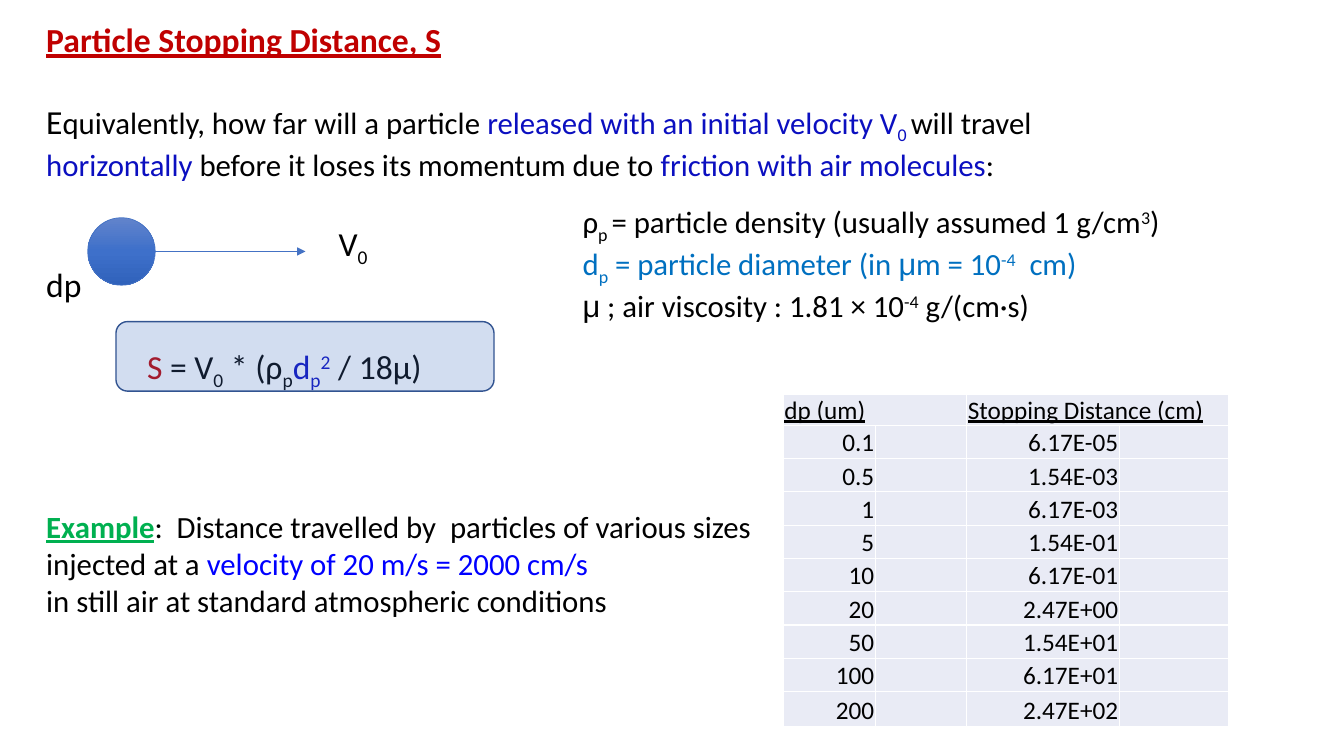
from copy import deepcopy

from lxml import etree
from pptx import Presentation
from pptx.dml.color import RGBColor
from pptx.enum.shapes import MSO_CONNECTOR, MSO_SHAPE
from pptx.enum.text import MSO_ANCHOR, MSO_AUTO_SIZE, PP_ALIGN
from pptx.oxml.ns import qn
from pptx.util import Inches, Pt

OVAL, ROUND = MSO_SHAPE.OVAL, MSO_SHAPE.ROUNDED_RECTANGLE
LINE = MSO_CONNECTOR.STRAIGHT
GROW, BOTTOM = MSO_AUTO_SIZE.SHAPE_TO_FIT_TEXT, MSO_ANCHOR.BOTTOM
RIGHT, LEFT = PP_ALIGN.RIGHT, PP_ALIGN.LEFT

HUES = {
    "red": "C00000", "black": "000000", "navy": "0B0FC0", "green": "00B050",
    "blue": "0000FF", "sky": "0070C0", "accent": "4472C4", "edge": "325491",
    "cell": "E9EBF5", "white": "FFFFFF",
    "top": "6183CB", "mid": "3E70CA", "base": "3062BB",
}
SUB, SUP = -25000, 30000
GAP = 29.3
HEAD = {"bold": True, "underline": True}
DATA = [
    ("0.1", "6.17E-05"), ("0.5", "1.54E-03"), ("1", "6.17E-03"),
    ("5", "1.54E-01"), ("10", "6.17E-01"), ("20", "2.47E+00"),
    ("50", "1.54E+01"), ("100", "6.17E+01"), ("200", "2.47E+02"),
]


def hue(name):
    return RGBColor.from_string(HUES[name])


def add_run(para, text, tint="black", shift=0, **extra):
    run = para.add_run()
    run.text = text
    look = {"name": "Calibri", "size": Pt(22), "bold": False, **extra}
    for key, value in look.items():
        setattr(run.font, key, value)
    run.font.color.rgb = hue(tint)
    if shift:
        run.font._element.set("baseline", str(shift))


def add_text(slide, box, paras, size):
    frame = slide.shapes.add_textbox(*map(Inches, box)).text_frame
    frame.word_wrap = True
    frame.auto_size = GROW
    for i, (gap, indent, runs) in enumerate(paras):
        para = frame.paragraphs[0] if i == 0 else frame.add_paragraph()
        para.space_before = Pt(gap)
        props = para._p.get_or_add_pPr()
        props.set("marL", str(Inches(indent)))
        props.set("indent", "0")
        for text, tint, shift, *extra in runs:
            look = extra[0] if extra else {}
            add_run(para, text, tint, shift, **{"size": Pt(size), **look})


def add_body(slide, x, y, w, h):
    big, small = {"size": Pt(24)}, {"size": Pt(22)}
    paras = [
        (0, 0, [("Particle Stopping Distance, S", "red", 0, {**big, **HEAD})]),
        (GAP, 0, [
            ("E", "black", 0, big),
            ("quivalently, how far will a particle ", "black", 0),
            ("released with an initial velocity V", "navy", 0),
            ("0 ", "navy", SUB),
            ("will travel ", "black", 0),
            ("horizontally", "navy", 0),
            (" before it loses its momentum due to ", "black", 0),
            ("friction with air molecules", "navy", 0),
            (":", "black", 0),
        ]),
        (2 * GAP, 0, [("dp", "black", 0, big)]),
        (GAP, 1, [(*part, big) for part in [
            ("S ", "red", 0), ("= V", "black", 0), ("0", "black", SUB),
            (" * (ρ", "black", 0), ("p", "black", SUB), ("d", "navy", 0),
            ("p", "navy", SUB), ("2", "navy", SUP), (" / 18μ)", "black", 0),
        ]]),
        (83, 0, [
            ("Example", "green", 0, {**small, **HEAD}),
            (":  Distance travelled by  particles of various sizes", "black", 0),
        ]),
        (0, 0, [
            ("injected at a ", "black", 0),
            ("velocity of 20 m/s = 2000 cm/s", "blue", 0),
        ]),
        (0, 0, [("in still air at standard atmospheric conditions", "black", 0)]),
    ]
    add_text(slide, (x, y, w, h), paras, 22)


def add_motion(slide, x, y, w, h):
    ball = slide.shapes.add_shape(OVAL, *map(Inches, (x, y, h, h)))
    ball.shadow.inherit = False
    ball.fill.gradient()
    ball.fill.gradient_angle = 270
    stops = ball._element.spPr.find(".//" + qn("a:gsLst"))
    stops.insert(1, deepcopy(stops[0]))
    for stop, tint, pos in zip(stops, ("top", "mid", "base"), (0, 50000, 100000)):
        stop.set("pos", str(pos))
        stop.remove(stop[0])
        etree.SubElement(stop, qn("a:srgbClr"), val=HUES[tint])
    ends = (x + h, y + h / 2, x + 2.16, y + h / 2)
    arrow = slide.shapes.add_connector(LINE, *map(Inches, ends))
    for item in (ball, arrow):
        item.line.color.rgb = hue("accent")
        item.line.width = Pt(0.5)
    etree.SubElement(arrow.line._get_or_add_ln(), qn("a:tailEnd"), type="triangle")
    etree.SubElement(arrow._element.spPr, qn("a:effectLst"))
    speed = [(0, 0, [("V", "black", 0), ("0", "black", SUB)])]
    add_text(slide, (x + w - 0.65, y, 0.65, 0.5), speed, 24)


def add_terms(slide, x, y, w, h):
    mu = {"name": "Arial"}
    paras = [
        (0, 1, [
            ("ρ", "black", 0), ("p ", "black", SUB),
            ("= particle density (usually assumed 1 g/cm", "black", 0),
            ("3", "black", SUP), (")", "black", 0),
        ]),
        (0, 1, [
            ("d", "sky", 0), ("p", "sky", SUB),
            (" = particle diameter (in ", "sky", 0), ("μ", "sky", 0, mu),
            ("m = 10", "sky", 0), ("-4", "sky", SUP), ("  cm)", "sky", 0),
        ]),
        (0, 1, [
            ("μ", "black", 0, mu), (" ; air viscosity : 1.81 × 10", "black", 0),
            ("-4", "black", SUP), (" g/(cm·s)", "black", 0),
        ]),
    ]
    add_text(slide, (x, y, w, h), paras, 22)


def add_frame(slide, x, y, w, h):
    frame = slide.shapes.add_shape(ROUND, *map(Inches, (x, y, w, h)))
    frame.shadow.inherit = False
    frame.fill.solid()
    frame.fill.fore_color.rgb = hue("accent")
    tint = frame._element.spPr.find(".//" + qn("a:srgbClr"))
    etree.SubElement(tint, qn("a:alpha"), val="24000")
    frame.line.color.rgb = hue("edge")
    frame.line.width = Pt(1)


def style_cell(cell):
    look = {
        "margin_left": Inches(0.01), "margin_right": Inches(0.01),
        "margin_top": Inches(0.01), "margin_bottom": 0,
        "vertical_anchor": BOTTOM,
    }
    for key, value in look.items():
        setattr(cell, key, value)
    props = cell._tc.get_or_add_tcPr()
    for side in ("lnL", "lnR", "lnT", "lnB"):
        edge = etree.SubElement(props, qn("a:" + side), w=str(Pt(1)))
        fill = etree.SubElement(edge, qn("a:solidFill"))
        etree.SubElement(fill, qn("a:srgbClr"), val=HUES["white"])
    cell.fill.solid()
    cell.fill.fore_color.rgb = hue("cell")


def add_grid(slide, x, y, w, h):
    rows = [("dp (um)", "Stopping Distance (cm)"), *DATA]
    box = map(Inches, (x, y, w, h))
    table = slide.shapes.add_table(len(rows), 4, *box).table
    table.first_row = table.horz_banding = False
    for col, width in zip(table.columns, (0.91, 0.91, 1.51, 1.09)):
        col.width = Inches(width)
    tall = [0.31] + [0.33] * (len(rows) - 2) + [0.35]
    for i, (row, size) in enumerate(zip(rows, tall)):
        table.rows[i].height = Inches(size)
        for cell in table.rows[i].cells:
            style_cell(cell)
        for j, text in zip((0, 2), row):
            cell = table.cell(i, j)
            if i == 0:
                cell.merge(table.cell(i, j + 1))
            para = cell.text_frame.paragraphs[0]
            para.alignment = RIGHT if i else LEFT
            add_run(para, text, size=Pt(18), underline=i == 0)


def main():
    deck = Presentation()
    deck.slide_width, deck.slide_height = Inches(13.33), Inches(7.5)
    slide = deck.slides.add_slide(deck.slide_layouts[6])
    add_body(slide, 0.36, 0.14, 11.41, 6.36)
    add_motion(slide, 0.87, 2.16, 3.04, 0.67)
    add_terms(slide, 4.68, 1.96, 7.79, 1.21)
    add_frame(slide, 1.15, 3.19, 3.75, 0.69)
    add_grid(slide, 7.77, 3.91, 4.42, 3.32)
    deck.save("out.pptx")


if __name__ == "__main__":
    main()
